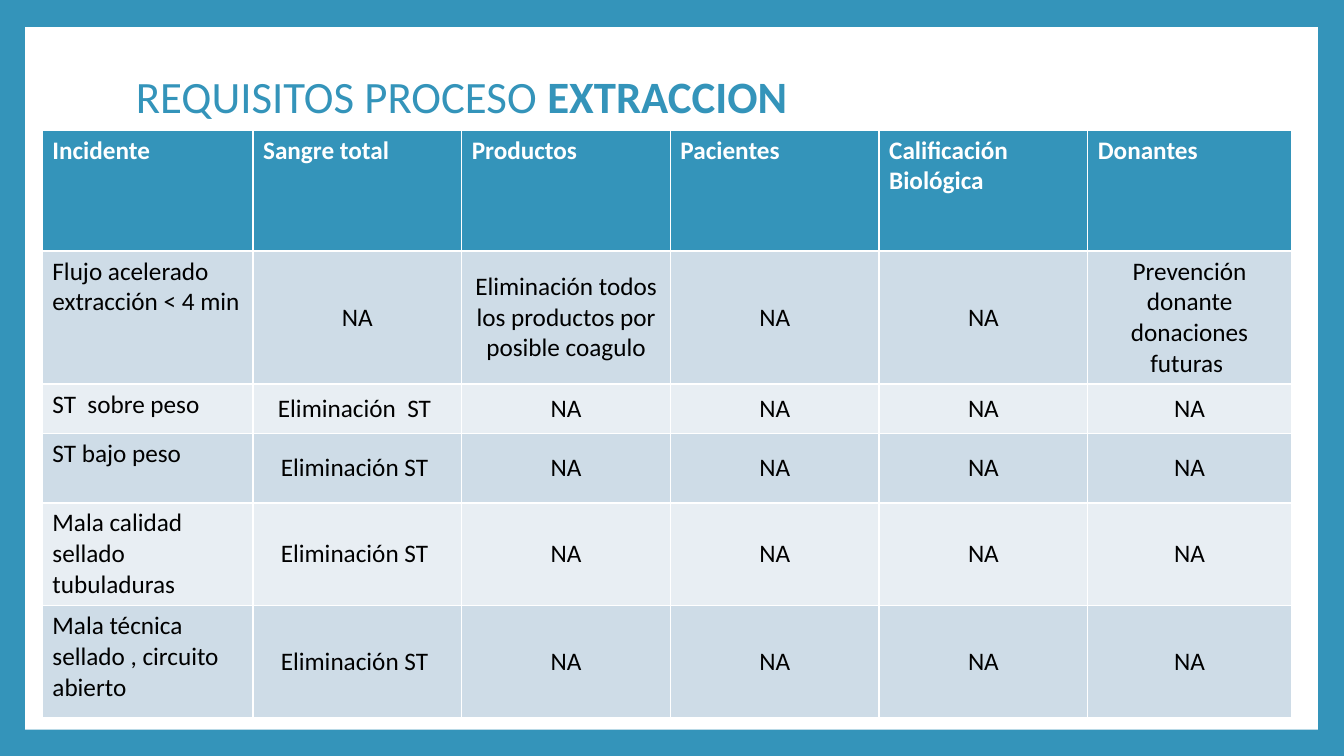
"""Build the slide of requirements for the extraction process."""
from pptx import Presentation
from pptx.dml.color import RGBColor
from pptx.enum.shapes import MSO_SHAPE
from pptx.enum.text import MSO_ANCHOR, PP_ALIGN
from pptx.util import Inches, Pt

RECT = MSO_SHAPE.RECTANGLE
TOP, MIDDLE = MSO_ANCHOR.TOP, MSO_ANCHOR.MIDDLE
LEFT, CENTER = PP_ALIGN.LEFT, PP_ALIGN.CENTER

FONT = "Calibri"
BLUE, WHITE, BLACK = "3494BA", "FFFFFF", "000000"
BANDS = ("CEDCE7", "E8EEF3")

TITLE = (("REQUISITOS PROCESO ", False), ("EXTRACCION", True))
HEAD = ("Incidente", "Sangre total", "Productos", "Pacientes",
        "Calificación Biológica", "Donantes")
NA = "NA"
BODY = (
    ("Flujo acelerado extracción < 4 min", NA,
     "Eliminación todos los productos por posible coagulo", NA, NA,
     "Prevención donante donaciones futuras "),
    ("ST  sobre peso", "Eliminación  ST ", NA, NA, NA, NA),
    ("ST bajo peso", "Eliminación ST ", NA, NA, NA, NA),
    ("Mala calidad sellado tubuladuras", "Eliminación ST ", NA, NA, NA, NA),
    ("Mala técnica sellado , circuito abierto", "Eliminación ST ",
     NA, NA, NA, NA),
)
WIDTHS = (2.09, 2.07, 2.07, 2.07, 2.07, 2.02)
HEIGHTS = (1.2, 1.32, 0.49, 0.69, 1.02, 1.11)


def color(code):
    return RGBColor.from_string(code)


def paint(fill, code):
    fill.solid()
    fill.fore_color.rgb = color(code)


def style(font, size, code):
    font.name = FONT
    font.size = Pt(size)
    font.color.rgb = color(code)


def add_panel(slide):
    paint(slide.background.fill, BLUE)
    panel = slide.shapes.add_shape(
        RECT, Inches(0.25), Inches(0.27), Inches(12.82), Inches(6.97))
    panel.shadow.inherit = False
    paint(panel.fill, WHITE)
    panel.line.fill.background()


def add_title(slide):
    box = slide.shapes.add_textbox(
        Inches(1.25), Inches(0.67), Inches(10.8), Inches(0.62))
    frame = box.text_frame
    frame.word_wrap = True
    frame.vertical_anchor = MIDDLE
    para = frame.paragraphs[0]
    para.line_spacing = 0.9
    style(para.font, 32, BLUE)
    for text, bold in TITLE:
        run = para.add_run()
        run.text = text
        run.font.bold = bold


def add_grid(slide):
    rows = (HEAD,) + BODY
    table = slide.shapes.add_table(
        len(rows), len(HEAD), Inches(0.42), Inches(1.29),
        Inches(sum(WIDTHS)), Inches(sum(HEIGHTS))).table
    for col, width in zip(table.columns, WIDTHS):
        col.width = Inches(width)
    for r, texts in enumerate(rows):
        table.rows[r].height = Inches(HEIGHTS[r])
        head = r == 0
        for c, text in enumerate(texts):
            cell = table.cell(r, c)
            plain = head or c == 0
            cell.text = text
            cell.vertical_anchor = TOP if plain else MIDDLE
            paint(cell.fill, BLUE if head else BANDS[(r - 1) % 2])
            para = cell.text_frame.paragraphs[0]
            para.alignment = LEFT if plain else CENTER
            style(para.font, 18, WHITE if head else BLACK)
            para.font.bold = head


def main():
    deck = Presentation()
    deck.slide_width, deck.slide_height = Inches(13.33), Inches(7.5)
    slide = deck.slides.add_slide(deck.slide_layouts[6])
    add_panel(slide)
    add_title(slide)
    add_grid(slide)
    deck.save("out.pptx")


if __name__ == "__main__":
    main()
